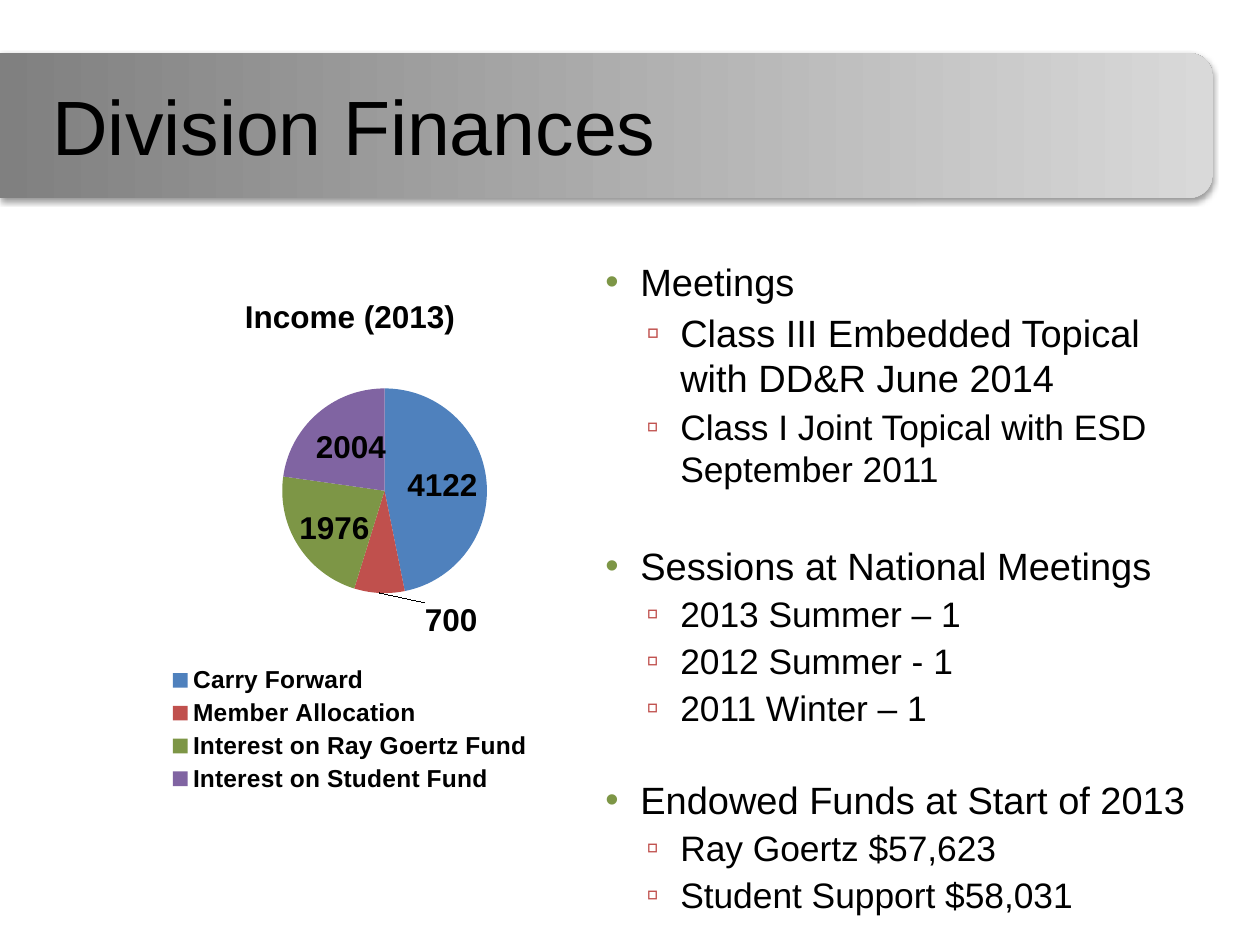
from lxml.etree import SubElement
from pptx import Presentation
from pptx.chart.data import CategoryChartData
from pptx.dml.color import RGBColor
from pptx.enum.chart import XL_CHART_TYPE as ChartType, XL_LABEL_POSITION as LabelPosition
from pptx.enum.chart import XL_LEGEND_POSITION as LegendPosition
from pptx.enum.shapes import MSO_SHAPE as Shape
from pptx.enum.text import MSO_ANCHOR as Anchor
from pptx.oxml.ns import qn
from pptx.util import Pt

PX = 914400 // 126
COLORS = {
    "text": "000000", "banner_dark": "808080", "banner_light": "D9D9D9",
    "blue": "4F81BD", "red": "C0504D", "green": "7D9646", "purple": "8064A2",
}


def set_font(font, size, bold=False):
    values = {"name": "Arial", "size": Pt(size), "bold": bold}
    for key, value in values.items():
        setattr(font, key, value)
    font.color.rgb = RGBColor.from_string(COLORS["text"])


def set_layout(parent, after, target=None, **fractions):
    layout = SubElement(parent, qn("c:layout"))
    after.addnext(layout)
    manual = SubElement(layout, qn("c:manualLayout"))
    if target:
        SubElement(manual, qn("c:layoutTarget"), val=target)
    if "w" in fractions:
        for mode in ("xMode", "yMode"):
            SubElement(manual, qn(f"c:{mode}"), val="edge")
    for key, value in fractions.items():
        SubElement(manual, qn(f"c:{key}"), val=str(value))


prs = Presentation()
prs.slide_width = 1260 * PX
prs.slide_height = 945 * PX
slide = prs.slides.add_slide(prs.slide_layouts[6])

length, thickness, top = 1213, 145, 53
banner = slide.shapes.add_shape(
    Shape.ROUND_2_SAME_RECTANGLE,
    (length - thickness) * PX // 2, (top - (length - thickness) // 2) * PX,
    thickness * PX, length * PX)
banner.rotation = 90
banner.line.fill.background()
banner.fill.gradient()
banner.fill.gradient_angle = 90
for stop, tone in zip(banner.fill.gradient_stops, ("banner_dark", "banner_light")):
    stop.color.rgb = RGBColor.from_string(COLORS[tone])
banner.shadow.inherit = False
effects = banner._element.spPr.find(qn("a:effectLst"))
shade = SubElement(effects, qn("a:outerShdw"), blurRad="39370", dist="20320",
                   dir="5400000", rotWithShape="0")
shade_color = SubElement(shade, qn("a:srgbClr"), val=COLORS["text"])
SubElement(shade_color, qn("a:alpha"), val="38000")

title = slide.shapes.add_textbox(40 * PX, 72 * PX, 655 * PX, 95 * PX).text_frame
title_format = {"word_wrap": True, "vertical_anchor": Anchor.TOP,
                "margin_top": 7 * PX, "margin_bottom": 0}
for key, value in title_format.items():
    setattr(title, key, value)
title.text = "Division Finances"
set_font(title.paragraphs[0].runs[0].font, 44)

LEVELS = [
    {"left": 51, "hang": 35, "mark": "•", "color": "green"},
    {"left": 91, "hang": 34, "mark": "▫", "color": "red"},
]
OUTLINE = [
    (0, 21.7, 0, "Meetings"),
    (1, 21.7, 2.6, "Class III Embedded Topical with DD&R June 2014"),
    (1, 20.2, 2.6, "Class I Joint Topical with ESD September 2011"),
    (0, 21.7, 30, "Sessions at National Meetings"),
    (1, 20.2, 2.6, "2013 Summer – 1"),
    (1, 20.2, 2.6, "2012 Summer - 1"),
    (1, 20.2, 2.6, "2011 Winter – 1"),
    (0, 21.7, 27, "Endowed Funds at Start of 2013"),
    (1, 20.2, 2.6, "Ray Goertz $57,623"),
    (1, 20.2, 2.6, "Student Support $58,031"),
]
outline = slide.shapes.add_textbox(577 * PX, 252 * PX, 630 * PX, 567 * PX).text_frame
outline.word_wrap = True
outline.margin_top = 7 * PX
for index, (level, size, gap, words) in enumerate(OUTLINE):
    entry = outline.add_paragraph() if index else outline.paragraphs[0]
    style = LEVELS[level]
    props = entry._p.get_or_add_pPr()
    props.set("marL", str(style["left"] * PX))
    props.set("indent", str(-style["hang"] * PX))
    mark_color = SubElement(props, qn("a:buClr"))
    SubElement(mark_color, qn("a:srgbClr"), val=COLORS[style["color"]])
    SubElement(props, qn("a:buFont"), typeface="Arial")
    SubElement(props, qn("a:buChar"), char=style["mark"])
    entry.level = level
    if gap:
        entry.space_before = Pt(gap)
    run = entry.add_run()
    run.text = words
    set_font(run.font, size)

INCOME = [
    ("Carry Forward", 4122, "blue", (0.01, 0)),
    ("Member Allocation", 700, "red", (0.1, 0.15)),
    ("Interest on Ray Goertz Fund", 1976, "green", (-0.01, 0.02)),
    ("Interest on Student Fund", 2004, "purple", (0, -0.01)),
]
income_data = CategoryChartData()
income_data.categories = [source for source, *_ in INCOME]
income_data.add_series("Series 1", [amount for _, amount, *_ in INCOME])
income = slide.shapes.add_chart(
    ChartType.PIE, 4 * PX, 273 * PX, 692 * PX, 525 * PX, income_data).chart
set_font(income.font, 10)
income.has_title = True
heading = income.chart_title.text_frame
heading.text = "Income (2013)"
set_font(heading.paragraphs[0].runs[0].font, 18, True)
income.has_legend = True
income.legend.position = LegendPosition.BOTTOM
income.legend.include_in_layout = False
set_font(income.legend.font, 14, True)
legend_part = income.legend._element
set_layout(legend_part, legend_part.find(qn("c:legendPos")), x=0.23, y=0.74, w=0.54, h=0.26)

pie = income.plots[0]
pie.vary_by_categories = True
plot_area = pie._element.getparent()
for old_layout in plot_area.findall(qn("c:layout")):
    plot_area.remove(old_layout)
marker = pie._element.getprevious()
if marker is None:
    marker = SubElement(plot_area, qn("c:layout"))
    plot_area.insert(0, marker)
set_layout(plot_area, marker, "inner", x=0.4, y=0.22, w=0.3, h=0.39)
plot_area.remove(marker)

amounts = pie.series[0]
amounts.data_labels.show_value = True
amounts.data_labels.position = LabelPosition.CENTER
set_font(amounts.data_labels.font, 18, True)
for index, (_, _, color, (shift_x, shift_y)) in enumerate(INCOME):
    point = amounts.points[index]
    point.format.fill.solid()
    point.format.fill.fore_color.rgb = RGBColor.from_string(COLORS[color])
    point.format.line.fill.background()
    set_font(point.data_label.font, 18, True)
    point.data_label.position = LabelPosition.CENTER
    label = amounts._element.findall(".//" + qn("c:dLbl"))[index]
    set_layout(label, label.find(qn("c:idx")), x=shift_x, y=shift_y)

prs.save("out.pptx")
